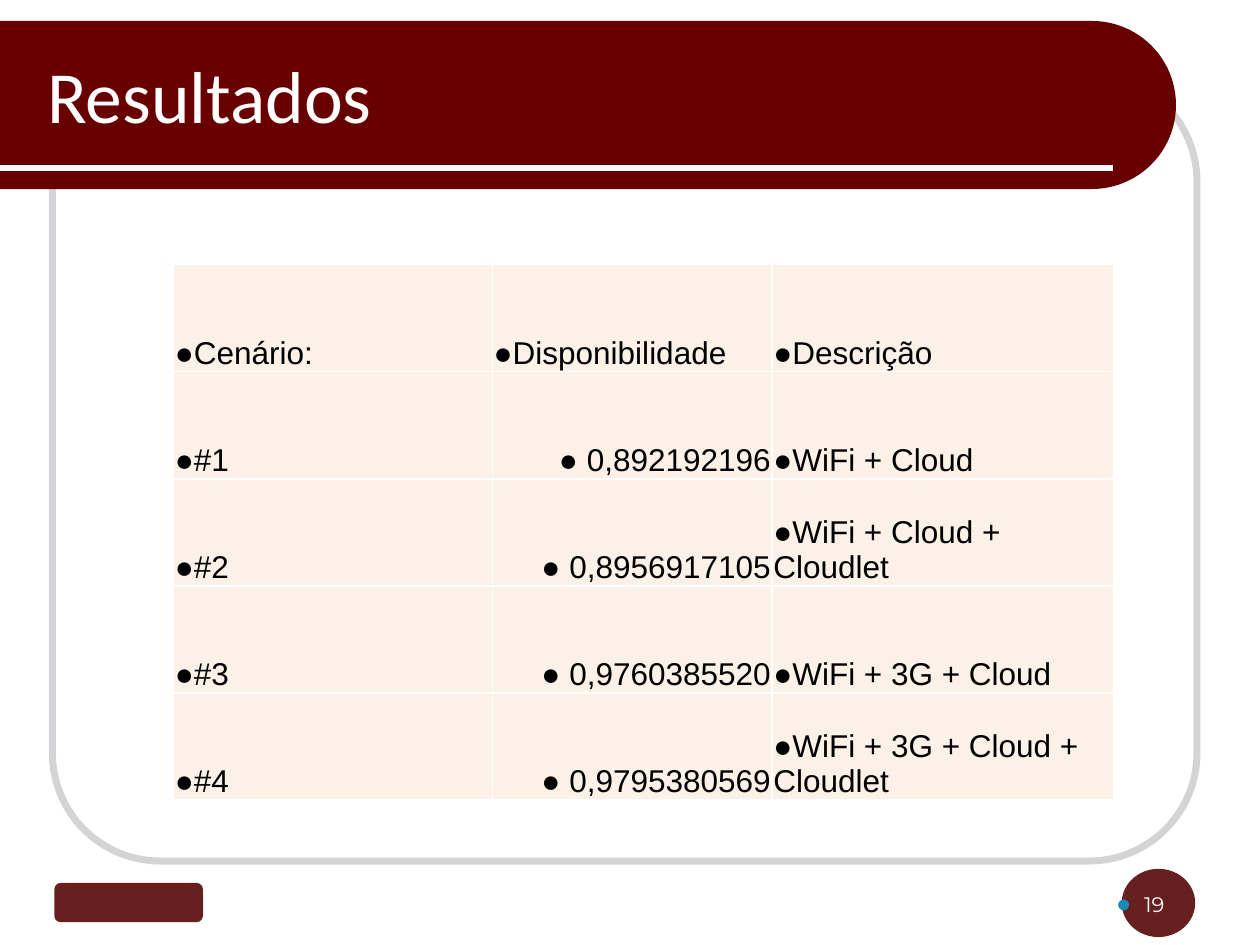
from math import cos, pi, sin

from lxml.etree import SubElement as Sub
from pptx import Presentation
from pptx.dml.color import RGBColor
from pptx.enum.shapes import MSO_CONNECTOR as Conn, MSO_SHAPE as Shape
from pptx.enum.text import MSO_ANCHOR as Anchor, PP_ALIGN as Align
from pptx.oxml import parse_xml
from pptx.oxml.ns import nsdecls, qn
from pptx.util import Pt

WINE = "680000"
BADGE = "672020"
WHITE = "FFFFFF"
BLACK = "000000"
BLUE = "168BBA"
GREY = "D4D4D6"
CREAM = "FCF1E7"

ROWS = [
    ("Cenário:", "Disponibilidade", "Descrição"),
    ("#1", "0,892192196", "WiFi + Cloud"),
    ("#2", "0,8956917105", "WiFi + Cloud + Cloudlet"),
    ("#3", "0,9760385520", "WiFi + 3G + Cloud"),
    ("#4", "0,9795380569", "WiFi + 3G + Cloud + Cloudlet"),
]


def paint(form, color):
    form.solid()
    form.fore_color.rgb = RGBColor.from_string(color)


def plain(shape, color):
    shape.shadow.inherit = False
    paint(shape.fill, color)
    shape.line.fill.background()


def write(para, text, size, font, color, align=Align.LEFT):
    para.alignment = align
    run = para.add_run()
    run.text = text
    run.font.size = Pt(size)
    run.font.name = font
    paint(run.font.fill, color)


def bullet(para, color, hang=0, scale=100):
    props = para._p.get_or_add_pPr()
    props.set("marL", str(Pt(hang)))
    props.set("indent", str(-Pt(hang)))
    Sub(Sub(props, qn("a:buClr")), qn("a:srgbClr"), val=color)
    Sub(props, qn("a:buSzPct"), val=str(scale * 1000))
    Sub(props, qn("a:buFont"), typeface="Arial")
    Sub(props, qn("a:buChar"), char="●")


def label(slide, box, anchor):
    frame = slide.shapes.add_textbox(*map(Pt, box)).text_frame
    frame.word_wrap = True
    frame.vertical_anchor = anchor
    return frame.paragraphs[0]


def add_frame(slide, box):
    shape = slide.shapes.add_shape(Shape.ROUNDED_RECTANGLE, *map(Pt, box))
    shape.adjustments[0] = 0.137
    shape.shadow.inherit = False
    shape.fill.background()
    paint(shape.line.fill, GREY)
    shape.line.width = Pt(4)


def add_banner(slide, box):
    left, top, width, height = box
    rad = height / 2
    turns = [pi * (step / 48 - 0.5) for step in range(49)]
    arc = [(Pt(left + width - rad + rad * cos(turn)),
            Pt(top + rad + rad * sin(turn))) for turn in turns]
    form = slide.shapes.build_freeform(Pt(left), Pt(top))
    form.add_line_segments(arc + [(Pt(left), Pt(top + height))], close=True)
    plain(form.convert_to_shape(), WINE)

    level = Pt(top + height - 12)
    rule = slide.shapes.add_connector(
        Conn.STRAIGHT, Pt(left), level, Pt(left + width - 36), level)
    paint(rule.line.fill, WHITE)
    rule.line.width = Pt(3)
    Sub(rule._element.spPr, qn("a:effectLst"))

    para = label(slide, (left + 20, top + 6, width - 46, 72), Anchor.MIDDLE)
    write(para, "Resultados", 42, "Calibri", WHITE)


def add_edges(cell):
    props = cell._tc.get_or_add_tcPr()
    for spot, side in enumerate("LRTB"):
        props.insert(spot, parse_xml(
            f'<a:ln{side} {nsdecls("a")} w="{Pt(1)}"><a:solidFill>'
            f'<a:srgbClr val="{WHITE}"/></a:solidFill></a:ln{side}>'))


def add_grid(slide, box):
    table = slide.shapes.add_table(
        len(ROWS), len(ROWS[0]), *map(Pt, box)).table
    table.first_row = False
    table.horz_banding = False
    for col, width in zip(table.columns, (182.2, 159.8, 195.1)):
        col.width = Pt(width)
    for y, texts in enumerate(ROWS):
        table.rows[y].height = Pt(box[3] / len(ROWS))
        for x, text in enumerate(texts):
            cell = table.cell(y, x)
            paint(cell.fill, CREAM)
            add_edges(cell)
            cell.vertical_anchor = Anchor.BOTTOM
            cell.margin_left = cell.margin_right = cell.margin_top = Pt(0.75)
            cell.margin_bottom = Pt(0.5)
            para = cell.text_frame.paragraphs[0]
            figure = x == 1 and y > 0
            bullet(para, BLACK, 16 if figure else 0)
            align = Align.RIGHT if figure else Align.LEFT
            write(para, text, 18, "Arial", BLACK, align)


def add_footer(slide, box):
    left, top, width, height = box
    tag = slide.shapes.add_shape(
        Shape.ROUNDED_RECTANGLE, Pt(left), Pt(top + 8), Pt(85), Pt(22.5))
    plain(tag, BADGE)
    disc = slide.shapes.add_shape(
        Shape.OVAL, Pt(left + width - 42), Pt(top), Pt(42), Pt(height))
    plain(disc, BADGE)
    para = label(
        slide, (left + width - 178.5, top - 5, 168, 36), Anchor.BOTTOM)
    bullet(para, BLUE, 16, 120)
    write(para, "19", 12, "Montserrat", WHITE, Align.RIGHT)


def main():
    deck = Presentation()
    deck.slide_width = Pt(720)
    deck.slide_height = Pt(540)
    slide = deck.slides.add_slide(deck.slide_layouts[6])
    add_frame(slide, (30, 42, 654, 450))
    add_banner(slide, (0, 12, 672, 96))
    add_grid(slide, (99.2, 151.2, 537.1, 306))
    add_footer(slide, (31, 496.5, 652, 39))
    deck.save("out.pptx")


if __name__ == "__main__":
    main()
